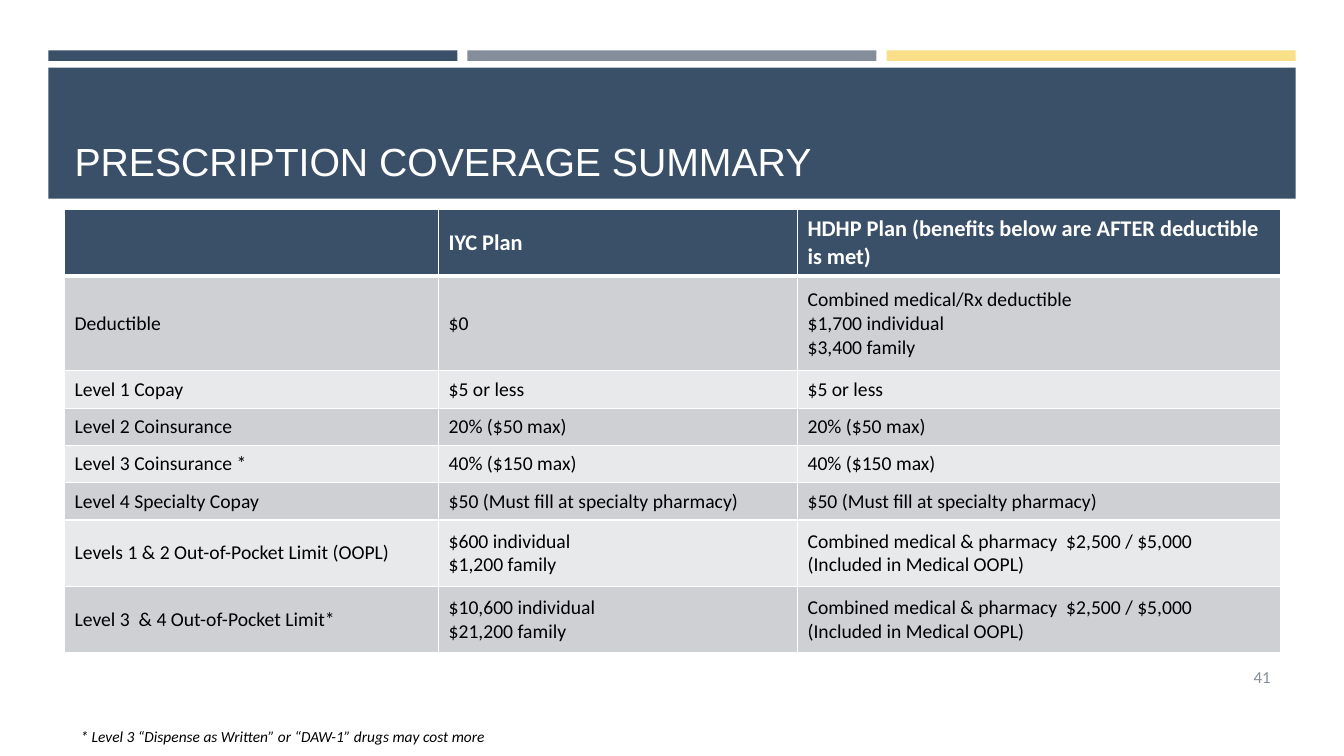
from collections import namedtuple
from dataclasses import dataclass

from lxml import etree
from pptx import Presentation
from pptx import util as u
from pptx.dml.color import RGBColor
from pptx.enum import shapes, text
from pptx.oxml import ns

Box = namedtuple("Box", "x y w h")


@dataclass(frozen=True)
class Theme:
    """Colours, fonts and type sizes of the slide."""
    navy: str = "3A5068"
    gray: str = "848D9A"
    gold: str = "F8DF88"
    dark: str = "CED0D4"
    light: str = "E8E9EB"
    white: str = "FFFFFF"
    black: str = "000000"
    head: str = "Arial"
    body: str = "Calibri"
    title: int = 28
    label: int = 16
    cell: int = 14
    page: int = 12
    note: int = 11


LOOK = Theme()
WIDE, HIGH = u.Inches(13.33), u.Inches(7.5)
BAND = Box(3.6, 6.67, 92.8, 19.6)
GRID = Box(4.8, 27.73, 90.47, 58.67)
PAGE = Box(86.65, 86.8, 8.63, 5.33)
NOTE = Box(5.25, 95.47, 89.95, 3.87)
COLS = (371, 356, 479)
LINES = {1: 37, 2: 66, 3: 94}
FILL = "$50 (Must fill at specialty pharmacy)"
POOL = "Combined medical & pharmacy  $2,500 / $5,000\n(Included in Medical OOPL)"
ROWS = (
    ("", "IYC Plan", "HDHP Plan (benefits below are AFTER deductible is met)"),
    ("Deductible", "$0",
     "Combined medical/Rx deductible\n$1,700 individual\n$3,400 family"),
    ("Level 1 Copay", "$5 or less", "$5 or less"),
    ("Level 2 Coinsurance", "20% ($50 max)", "20% ($50 max)"),
    ("Level 3 Coinsurance *", "40% ($150 max)", "40% ($150 max)"),
    ("Level 4 Specialty Copay", FILL, FILL),
    ("Levels 1 & 2 Out-of-Pocket Limit (OOPL)",
     "$600 individual\n$1,200 family", POOL),
    ("Level 3  & 4 Out-of-Pocket Limit*",
     "$10,600 individual\n$21,200 family", POOL),
)


def place(box):
    """Turn percent shares of the slide into lengths."""
    return (round(box.x * WIDE / 100), round(box.y * HIGH / 100),
            round(box.w * WIDE / 100), round(box.h * HIGH / 100))


def style(frame, size, color, face=LOOK.body, bold=False, slant=False,
          align=text.PP_ALIGN.LEFT):
    """Format every run in a text frame."""
    for para in frame.paragraphs:
        para.alignment = align
        for run in para.runs:
            font = run.font
            font.name, font.size = face, u.Pt(size)
            font.bold, font.italic = bold, slant
            font.color.rgb = RGBColor.from_string(color)


def block(slide, box, color):
    """Put a plain filled rectangle behind the title."""
    shape = slide.shapes.add_shape(shapes.MSO_SHAPE.RECTANGLE, *place(box))
    shape.shadow.inherit = False
    shape.fill.solid()
    shape.fill.fore_color.rgb = RGBColor.from_string(color)
    shape.line.fill.background()
    slide.shapes.title.element.addprevious(shape.element)


def banner(slide, box, words):
    """Draw three accent bars, the title band and the title."""
    gap = 0.75
    wide = (box.w - 2 * gap) / 3
    for i, color in enumerate((LOOK.navy, LOOK.gray, LOOK.gold)):
        block(slide, Box(box.x + i * (wide + gap), box.y, wide, 1.4), color)
    block(slide, Box(box.x, box.y + 2.27, box.w, box.h - 2.27), LOOK.navy)
    title = slide.shapes.title
    title.left, title.top, title.width, title.height = place(
        Box(box.x + 1.2, box.y + 3.6, box.w - 2.33, box.h - 4.8))
    frame = title.text_frame
    frame.text = words
    frame.vertical_anchor = text.MSO_ANCHOR.BOTTOM
    frame.word_wrap = True
    style(frame, LOOK.title, LOOK.white, LOOK.head)


def edge(cell, side, width):
    """Add one white border to a cell."""
    line = etree.SubElement(cell._tc.get_or_add_tcPr(), ns.qn("a:" + side),
                            w=str(u.Pt(width)))
    paint = etree.SubElement(line, ns.qn("a:solidFill"))
    etree.SubElement(paint, ns.qn("a:srgbClr"), val=LOOK.white)


def table(slide, box, rows):
    """Draw the coverage table with rows sized by their line counts."""
    left, top, wide, high = place(box)
    grid = slide.shapes.add_table(len(rows), len(COLS), left, top, wide, high).table
    for col, part in zip(grid.columns, COLS):
        col.width = round(wide * part / sum(COLS))
    parts = [LINES[max(s.count("\n") + 1 for s in row)] for row in rows]
    parts[0] = LINES[2]
    for r, row in enumerate(rows):
        grid.rows[r].height = round(high * parts[r] / sum(parts))
        for c, words in enumerate(row):
            cell = grid.cell(r, c)
            cell.text_frame.text = words
            cell.vertical_anchor = text.MSO_ANCHOR.MIDDLE
            for side in ("lnL", "lnR", "lnT", "lnB"):
                thick = (r, side) in ((0, "lnB"), (1, "lnT"))
                edge(cell, side, 3 if thick else 1)
            back = (LOOK.light, LOOK.dark)[r % 2] if r else LOOK.navy
            cell.fill.solid()
            cell.fill.fore_color.rgb = RGBColor.from_string(back)
            if r:
                style(cell.text_frame, LOOK.cell, LOOK.black)
            else:
                style(cell.text_frame, LOOK.label, LOOK.white, bold=True)


def label(slide, box, words, size, color, anchor=text.MSO_ANCHOR.TOP, **form):
    """Place a wrapped line of small text."""
    frame = slide.shapes.add_textbox(*place(box)).text_frame
    frame.word_wrap = True
    frame.vertical_anchor = anchor
    frame.text = words
    style(frame, size, color, **form)


def main():
    """Build and save the slide."""
    deck = Presentation()
    deck.slide_width, deck.slide_height = WIDE, HIGH
    slide = deck.slides.add_slide(deck.slide_layouts[5])
    banner(slide, BAND, "PRESCRIPTION COVERAGE SUMMARY")
    table(slide, GRID, ROWS)
    label(slide, PAGE, "41", LOOK.page, LOOK.gray, text.MSO_ANCHOR.MIDDLE,
          align=text.PP_ALIGN.RIGHT)
    label(slide, NOTE,
          "* Level 3 “Dispense as Written” or “DAW-1” drugs may cost more",
          LOOK.note, LOOK.black, slant=True)
    deck.save("out.pptx")


if __name__ == "__main__":
    main()
